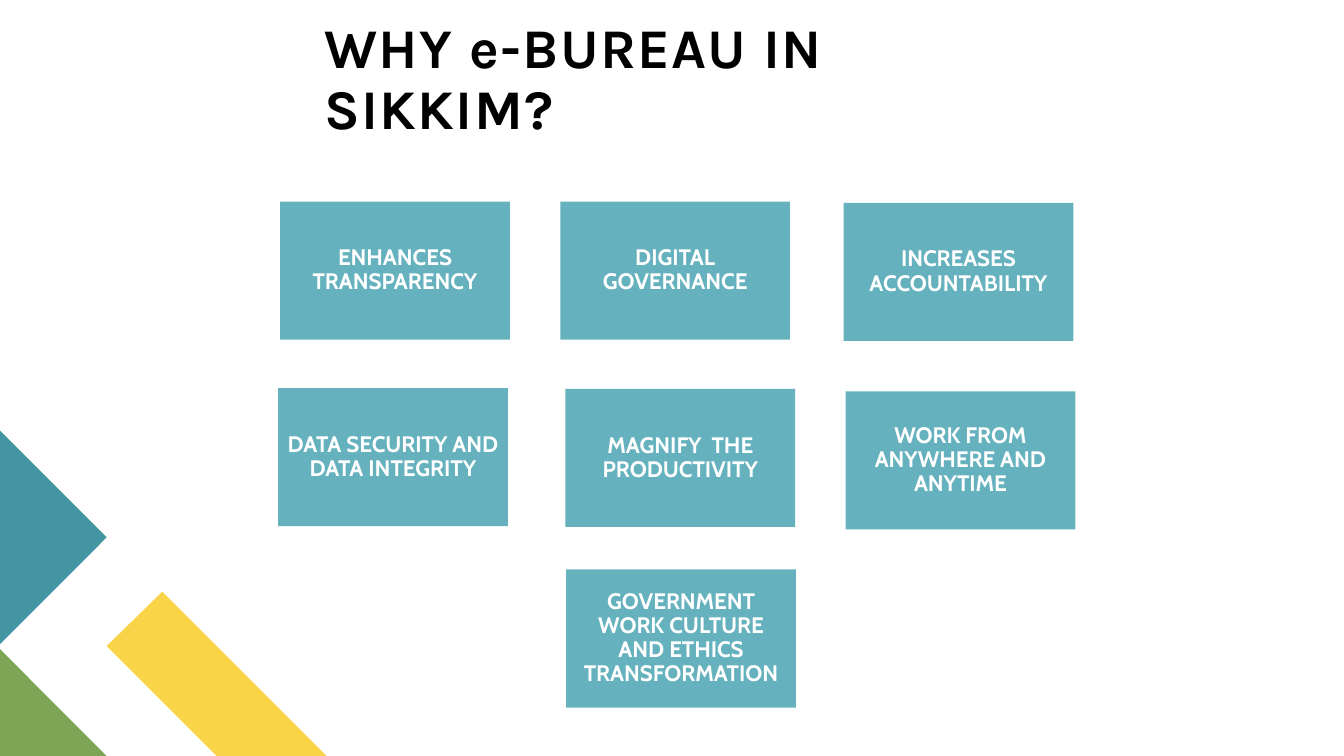
from pptx import Presentation
from pptx.dml.color import RGBColor
from pptx.enum.shapes import MSO_SHAPE
from pptx.enum.text import MSO_ANCHOR, MSO_AUTO_SIZE, PP_ALIGN
from pptx.util import Cm, Pt

RECTANGLE = MSO_SHAPE.RECTANGLE
MIDDLE, BOTTOM = MSO_ANCHOR.MIDDLE, MSO_ANCHOR.BOTTOM
LEFT, CENTER = PP_ALIGN.LEFT, PP_ALIGN.CENTER
NO_AUTOFIT = MSO_AUTO_SIZE.NONE

BLACK = RGBColor(0x00, 0x00, 0x00)
WHITE = RGBColor(0xFF, 0xFF, 0xFF)
AQUA = RGBColor(0x65, 0xB2, 0xBE)
YELLOW = RGBColor(0xF9, 0xD4, 0x48)
GREEN = RGBColor(0x7C, 0xA6, 0x55)
TEAL = RGBColor(0x44, 0x95, 0xA2)

HEADING = "WHY e-BUREAU IN SIKKIM?"
REASONS = [
    ("ENHANCES TRANSPARENCY", 7.06, 5.08),
    ("DIGITAL GOVERNANCE", 14.12, 5.08),
    ("INCREASES ACCOUNTABILITY", 21.26, 5.11),
    ("DATA SECURITY AND DATA INTEGRITY", 7.01, 9.78),
    ("MAGNIFY  THE PRODUCTIVITY", 14.25, 9.8),
    ("WORK FROM ANYWHERE AND ANYTIME", 21.31, 9.86),
    ("GOVERNMENT WORK CULTURE AND ETHICS TRANSFORMATION", 14.27, 14.35),
]
REASON_WIDTH, REASON_HEIGHT = Cm(5.79), Cm(3.48)
CORNER_PIECES = [
    (YELLOW, [(8.23, 19.05), (5.46, 19.05), (2.69, 16.28), (4.09, 14.91)]),
    (GREEN, [(2.69, 19.05), (0, 19.05), (0, 16.36)]),
    (TEAL, [(0, 10.85), (2.69, 13.54), (0, 16.23)]),
]


def paint(shape, color):
    shape.shadow.inherit = False
    shape.fill.solid()
    shape.fill.fore_color.rgb = color
    shape.line.fill.background()


def write(shape, text, font_name, size, color, align, anchor, inset):
    frame = shape.text_frame
    frame.text = text
    frame.word_wrap = True
    frame.auto_size = NO_AUTOFIT
    frame.vertical_anchor = anchor
    frame.margin_left = frame.margin_right = inset
    frame.margin_top = frame.margin_bottom = inset
    paragraph = frame.paragraphs[0]
    paragraph.alignment = align
    paragraph.line_spacing = 0.9
    run = paragraph.runs[0]
    run.font.name = font_name
    run.font.size = Pt(size)
    run.font.bold = True
    run.font.color.rgb = color
    return run


def main():
    deck = Presentation()
    deck.slide_width, deck.slide_height = Cm(33.87), Cm(19.05)
    slide = deck.slides.add_slide(deck.slide_layouts[5])

    for color, corners in CORNER_PIECES:
        points = [(Cm(x), Cm(y)) for x, y in corners]
        outline = slide.shapes.build_freeform(*points[0])
        outline.add_line_segments(points[1:], close=True)
        paint(outline.convert_to_shape(), color)

    title = slide.shapes.title
    title.left, title.top = Cm(8.18), Cm(1.35)
    title.width, title.height = Cm(17.68), Cm(2.21)
    heading = write(title, HEADING, "Karla", 40, BLACK, LEFT, BOTTOM, 0)
    heading.font._element.set("spc", "100")

    for reason, x, y in REASONS:
        card = slide.shapes.add_shape(RECTANGLE, Cm(x), Cm(y), REASON_WIDTH, REASON_HEIGHT)
        paint(card, AQUA)
        write(card, reason, "Cabin", 16, WHITE, CENTER, MIDDLE, Cm(0.17))

    deck.save("out.pptx")


if __name__ == "__main__":
    main()
